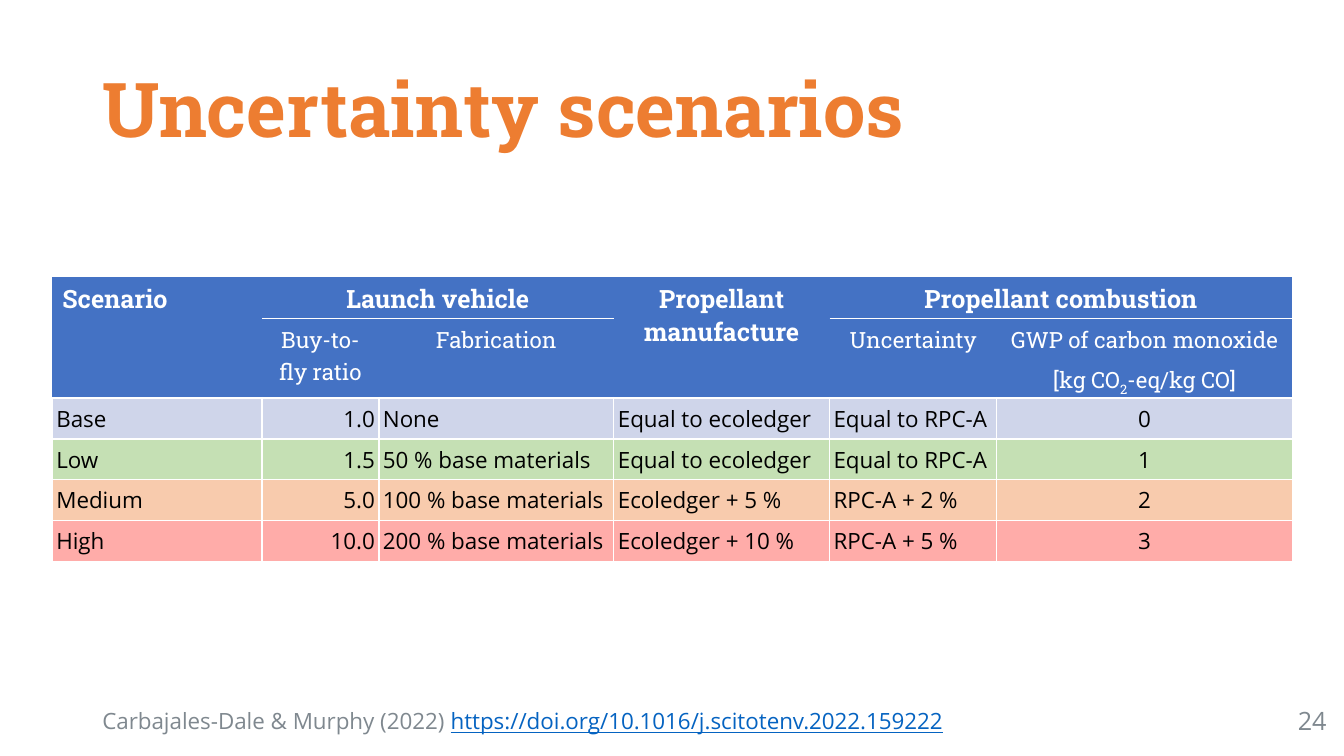
"""Build the slide on uncertainty scenarios with its scenario table."""
import lxml.etree
import pptx
import pptx.dml.color
import pptx.enum.text
import pptx.oxml.ns
import pptx.util

Pt = pptx.util.Pt
Align = pptx.enum.text.PP_ALIGN
Anchor = pptx.enum.text.MSO_ANCHOR


def color(hex_string):
    return pptx.dml.color.RGBColor.from_string(hex_string)


class Deck:
    """Holds the style and the current slide."""

    heading_font, body_font = "Roboto Slab", "Open Sans"
    orange, grey, blue, link = "ED7D31", "7F888F", "4472C4", "0563C1"
    white, black = "FFFFFF", "000000"

    def __init__(self):
        self.presentation = pptx.Presentation()
        self.presentation.slide_width = Pt(960)
        self.presentation.slide_height = Pt(540)
        self.slide = self.presentation.slides.add_slide(self.presentation.slide_layouts[6])

    def style(self, paragraph, font, size, hex_string, bold=False, align=Align.LEFT):
        paragraph.alignment = align
        paragraph.font.name = font
        paragraph.font.size = Pt(size)
        paragraph.font.bold = bold
        paragraph.font.color.rgb = color(hex_string)

    def text(self, box, words, font, size, hex_string, bold=False,
             align=Align.LEFT, anchor=Anchor.TOP, wrap=True):
        frame = self.slide.shapes.add_textbox(*map(Pt, box)).text_frame
        frame.word_wrap = wrap
        frame.vertical_anchor = anchor
        paragraph = frame.paragraphs[0]
        paragraph.text = words
        self.style(paragraph, font, size, hex_string, bold, align)
        return paragraph

    def table(self, left, top, widths, heights):
        table = self.slide.shapes.add_table(
            len(heights), len(widths), Pt(left), Pt(top), Pt(sum(widths)), Pt(sum(heights))).table
        for column, width in zip(table.columns, widths):
            column.width = Pt(width)
        for row, height in zip(table.rows, heights):
            row.height = Pt(height)
        return table

    def cell(self, cell, fill, **borders):
        cell.fill.solid()
        cell.fill.fore_color.rgb = color(fill)
        properties = cell._tc.get_or_add_tcPr()
        for position, side in enumerate("LRTB"):
            line = lxml.etree.Element(pptx.oxml.ns.qn(f"a:ln{side}"))
            properties.insert(position, line)
            if side in borders:
                line.set("w", str(Pt(borders[side])))
                solid = lxml.etree.SubElement(line, pptx.oxml.ns.qn("a:solidFill"))
                lxml.etree.SubElement(solid, pptx.oxml.ns.qn("a:srgbClr"), val=self.white)
            else:
                lxml.etree.SubElement(line, pptx.oxml.ns.qn("a:noFill"))

    def group_heading(self, cell, words, align=Align.CENTER):
        cell.text = words
        self.style(cell.text_frame.paragraphs[0], self.heading_font, 18, self.white, True, align)

    def sub_heading(self, cell, words):
        cell.text = words
        for paragraph in cell.text_frame.paragraphs:
            paragraph.line_spacing = 1.07
            paragraph.space_after = Pt(6)
            self.style(paragraph, self.heading_font, 16, self.white, align=Align.CENTER)

    def value(self, cell, words, align):
        cell.text = words
        cell.vertical_anchor = Anchor.MIDDLE
        cell.margin_left = cell.margin_right = cell.margin_top = cell.margin_bottom = Pt(2.9)
        self.style(cell.text_frame.paragraphs[0], self.body_font, 16, self.black, align=align)


def main():
    deck = Deck()
    title = deck.text((66, 28.75, 828, 104.4), "Uncertainty scenarios", deck.heading_font, 54,
                      deck.orange, bold=True, anchor=Anchor.MIDDLE)
    title.line_spacing = 0.9

    citation = deck.text((66, 501.8, 621.4, 26.6), "Carbajales-Dale & Murphy (2022) ",
                         deck.body_font, 16, deck.grey, wrap=False)
    doi = citation.add_run()
    doi.text = "https://doi.org/10.1016/j.scitotenv.2022.159222"
    doi.font.color.rgb = color(deck.link)
    doi.font.underline = True

    deck.text((738.7, 500.4, 216, 28.8), "24", deck.body_font, 18, deck.grey,
              align=Align.RIGHT, anchor=Anchor.MIDDLE)

    scenarios = [
        ("CFD5EA", "Base", "1.0", "None", "Equal to ecoledger", "Equal to RPC-A", "0"),
        ("C5E0B4", "Low", "1.5", "50 % base materials", "Equal to ecoledger", "Equal to RPC-A", "1"),
        ("F8CBAD", "Medium", "5.0", "100 % base materials", "Ecoledger + 5 %", "RPC-A + 2 %", "2"),
        ("FFACA9", "High", "10.0", "200 % base materials", "Ecoledger + 10 %", "RPC-A + 5 %", "3"),
    ]
    alignments = [Align.LEFT, Align.RIGHT, Align.LEFT, Align.LEFT, Align.LEFT, Align.CENTER]
    table = deck.table(37.4, 198, [149.8, 83.5, 167.8, 154.1, 119.5, 211],
                       [29.3, 56.8] + [29.2] * len(scenarios))

    tall_columns = (0, 3)
    for column in range(len(alignments)):
        divider = {} if column in tall_columns else {"B": 1}
        deck.cell(table.cell(0, column), deck.blue, **divider)
        rule_above = {} if column in tall_columns else {"T": 1}
        deck.cell(table.cell(1, column), deck.blue, B=2.25, **rule_above)
    for column in tall_columns:
        table.cell(0, column).merge(table.cell(1, column))
    for column in (1, 4):
        table.cell(0, column).merge(table.cell(0, column + 1))

    deck.group_heading(table.cell(0, 0), "Scenario", Align.LEFT)
    for column, heading in ((1, "Launch vehicle"), (3, "Propellant manufacture"),
                            (4, "Propellant combustion")):
        deck.group_heading(table.cell(0, column), heading)
    for column, heading in ((1, "Buy-to-fly ratio"), (2, "Fabrication"), (4, "Uncertainty"),
                            (5, "GWP of carbon monoxide\n[kg CO")):
        deck.sub_heading(table.cell(1, column), heading)
    unit = table.cell(1, 5).text_frame.paragraphs[1]
    subscript = unit.add_run()
    subscript.text = "2"
    subscript.font._element.set("baseline", "-25000")
    unit.add_run().text = "-eq/kg CO]"

    for row, (fill, *values) in enumerate(scenarios, start=2):
        for column, (words, align) in enumerate(zip(values, alignments)):
            cell = table.cell(row, column)
            deck.cell(cell, fill, L=1, R=1, T=2.25 if row == 2 else 1, B=1)
            deck.value(cell, words, align)

    deck.presentation.save("out.pptx")


if __name__ == "__main__":
    main()
